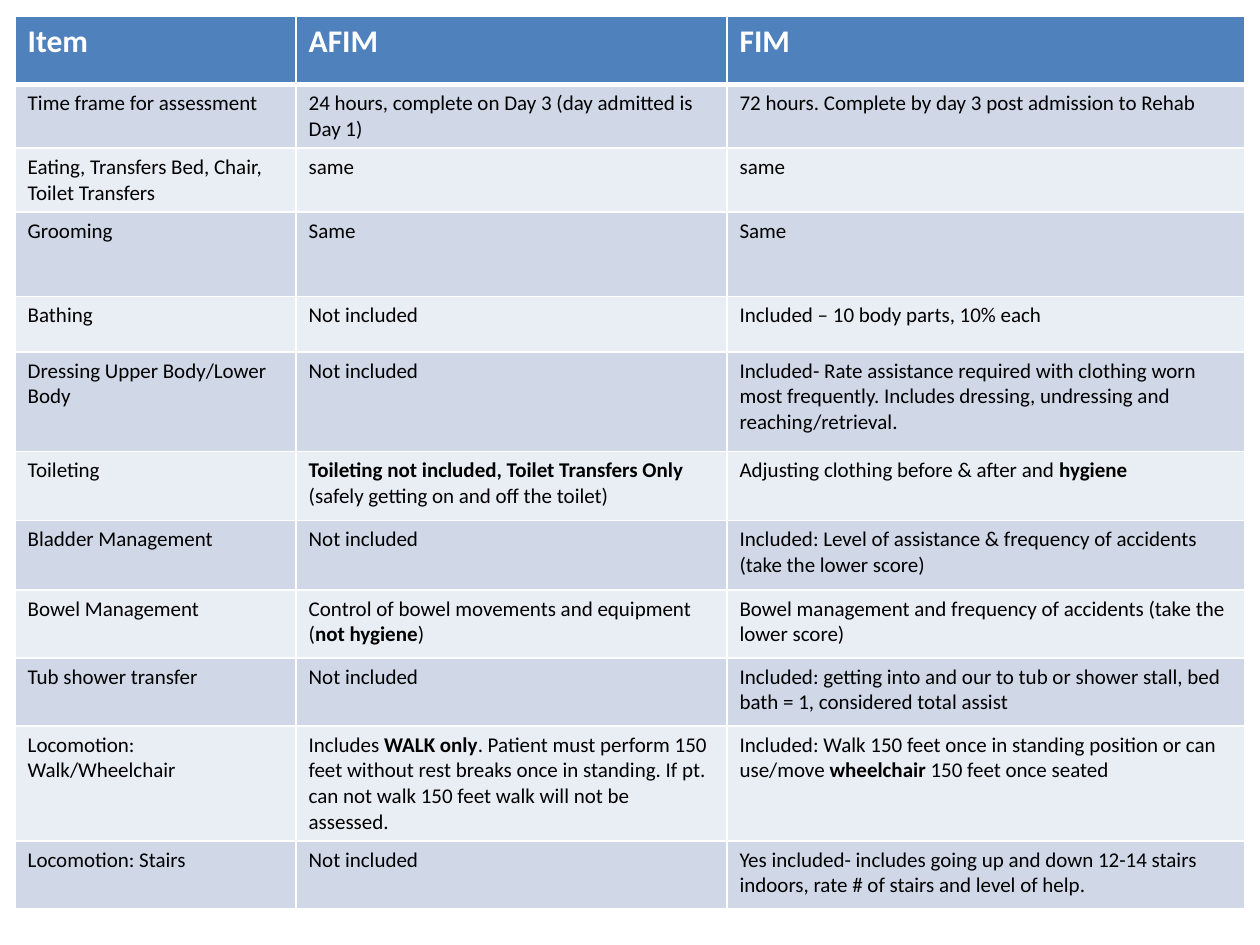
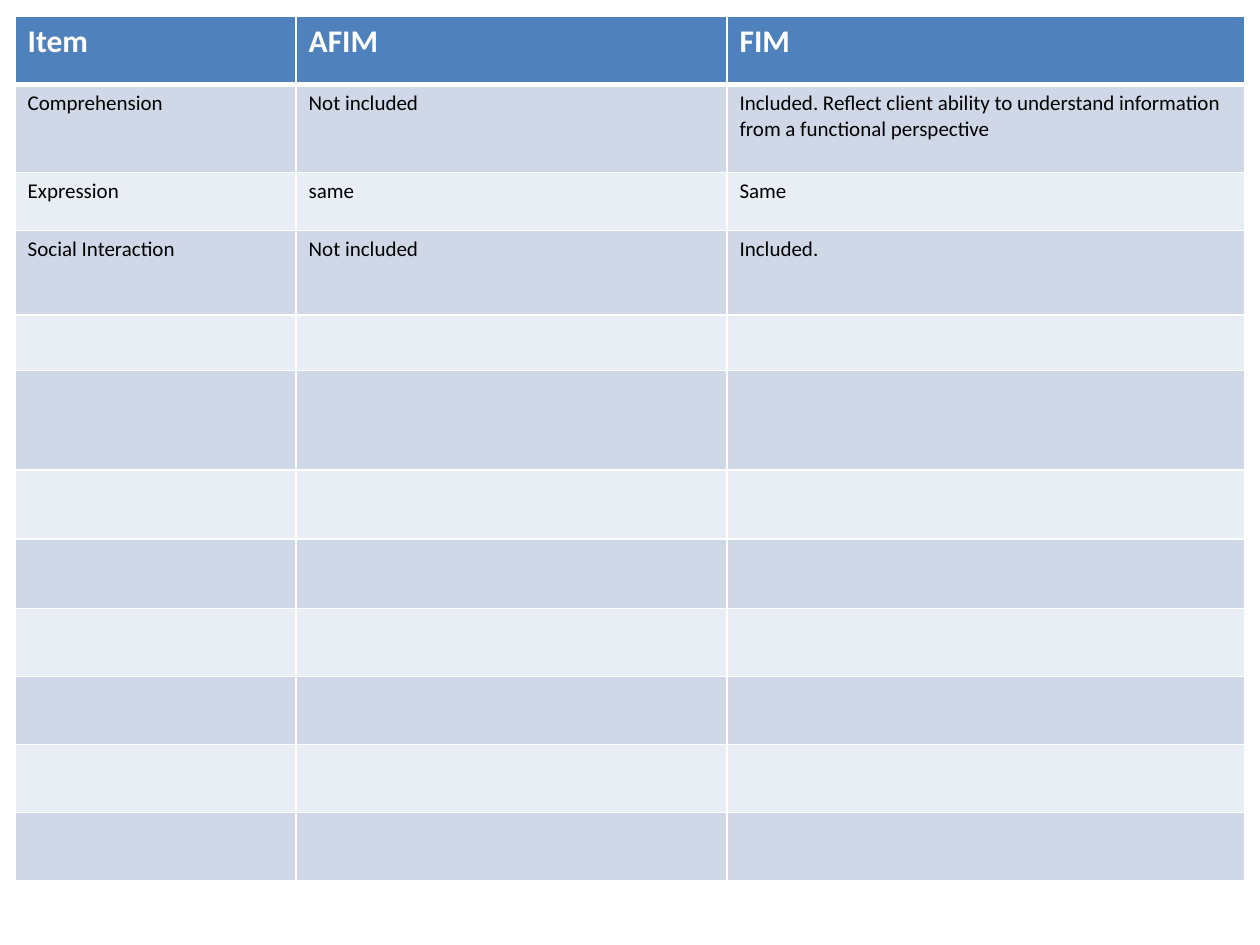
from dataclasses import dataclass

from lxml.etree import SubElement
from pptx import Presentation
from pptx.dml.color import RGBColor as Color
from pptx.oxml.ns import qn
from pptx.util import Inches, Pt


@dataclass(frozen=True)
class Theme:
    font: str = "Calibri"
    header_fill: str = "4F81BD"
    header_text: str = "FFFFFF"
    body_text: str = "000000"
    bands: tuple = ("D0D8E8", "E9EDF4")
    border: str = "FFFFFF"
    header_size: int = 18
    body_size: int = 12
    thin: int = 1
    thick: int = 3


THEME = Theme()
BOLD_MARK = "**"
TABLE_LEFT, TABLE_TOP = 0.12, 0.13
COLUMN_WIDTHS = (2.23, 3.42, 4.11)
HEADER = ("Item", "AFIM", "FIM")
HEADER_HEIGHT = 0.54

# Each row: height in inches, then its cell texts; **...** marks bold.
PHYSICAL_ITEMS = [
    (0.5, "Time frame for assessment",
     "24 hours, complete on Day 3 (day admitted is Day 1)",
     "72 hours. Complete by day 3 post admission to Rehab"),
    (0.5, "Eating, Transfers Bed, Chair, Toilet Transfers", "same", "same"),
    (0.67, "Grooming", "Same", "Same"),
    (0.44, "Bathing", "Not included", "Included – 10 body parts, 10% each"),
    (0.79, "Dressing Upper Body/Lower Body", "Not included",
     "Included- Rate assistance required with clothing worn most frequently. "
     "Includes dressing, undressing and reaching/retrieval."),
    (0.55, "Toileting",
     "**Toileting not included, Toilet Transfers Only** "
     "(safely getting on and off the toilet)",
     "Adjusting clothing before & after and **hygiene**"),
    (0.55, "Bladder Management", "Not included",
     "Included: Level of assistance & frequency of accidents "
     "(take the lower score)"),
    (0.54, "Bowel Management",
     "Control of bowel movements and equipment (**not hygiene**)",
     "Bowel management and frequency of accidents (take the lower score)"),
    (0.54, "Tub shower transfer", "Not included",
     "Included: getting into and our to tub or shower stall, "
     "bed bath = 1, considered total assist"),
    (0.91, "Locomotion: Walk/Wheelchair",
     "Includes **WALK only**. Patient must perform 150 feet without rest "
     "breaks once in standing. If pt. can not walk 150 feet walk will not "
     "be assessed.",
     "Included: Walk 150 feet once in standing position or can use/move "
     "**wheelchair** 150 feet once seated"),
    (0.54, "Locomotion: Stairs", "Not included",
     "Yes included- includes going up and down 12-14 stairs indoors, "
     "rate # of stairs and level of help."),
]
EMPTY_HEIGHTS = (0.44, 0.79, 0.55, 0.55, 0.54, 0.54, 0.54, 0.54)
COGNITIVE_ITEMS = [
    (0.7, "Comprehension", "Not included",
     "Included. Reflect client ability to understand information "
     "from a functional perspective"),
    (0.46, "Expression", "same", "Same"),
    (0.67, "Social Interaction", "Not included", "Included."),
] + [(height, "", "", "") for height in EMPTY_HEIGHTS]


def set_borders(cell, widths):
    """Draw borders; widths maps a side (L, R, T, B) to points."""
    properties = cell._tc.get_or_add_tcPr()
    for side, width in widths.items():
        line = SubElement(properties, qn(f"a:ln{side}"), w=str(Pt(width)))
        fill = SubElement(line, qn("a:solidFill"))
        SubElement(fill, qn("a:srgbClr"), val=THEME.border)


def write_text(cell, text, size, color, bold):
    """Write text, switching to bold inside each pair of bold marks."""
    paragraph = cell.text_frame.paragraphs[0]
    for index, part in enumerate(text.split(BOLD_MARK)):
        if not part:
            continue
        run = paragraph.add_run()
        run.text = part
        font_format = {"name": THEME.font, "size": Pt(size),
                       "bold": bold or index % 2 == 1}
        for name, value in font_format.items():
            setattr(run.font, name, value)
        run.font.color.rgb = Color.from_string(color)


def style_cell(cell, row_index):
    """Set borders and fill; the rule under the header is thick."""
    set_borders(cell, {
        "L": THEME.thin,
        "R": THEME.thin,
        "T": THEME.thick if row_index == 1 else THEME.thin,
        "B": THEME.thick if row_index == 0 else THEME.thin,
    })
    band = THEME.bands[(row_index - 1) % len(THEME.bands)]
    cell.fill.solid()
    cell.fill.fore_color.rgb = Color.from_string(
        THEME.header_fill if row_index == 0 else band)


def add_comparison_table(slide, left, top, widths, items):
    rows = [(HEADER_HEIGHT, *HEADER), *items]
    total_height = sum(row[0] for row in rows)
    table = slide.shapes.add_table(
        len(rows), len(widths), Inches(left), Inches(top),
        Inches(sum(widths)), Inches(total_height)).table
    for column, width in zip(table.columns, widths):
        column.width = Inches(width)
    for row_index, (height, *texts) in enumerate(rows):
        table.rows[row_index].height = Inches(height)
        is_header = row_index == 0
        size = THEME.header_size if is_header else THEME.body_size
        color = THEME.header_text if is_header else THEME.body_text
        for column_index, text in enumerate(texts):
            cell = table.cell(row_index, column_index)
            style_cell(cell, row_index)
            write_text(cell, text, size, color, is_header)


def main():
    presentation = Presentation()
    presentation.slide_width = Inches(10)
    presentation.slide_height = Inches(7.5)
    blank_layout = presentation.slide_layouts[6]
    for items in (PHYSICAL_ITEMS, COGNITIVE_ITEMS):
        slide = presentation.slides.add_slide(blank_layout)
        add_comparison_table(slide, TABLE_LEFT, TABLE_TOP,
                             COLUMN_WIDTHS, items)
    presentation.save("out.pptx")


if __name__ == "__main__":
    main()
